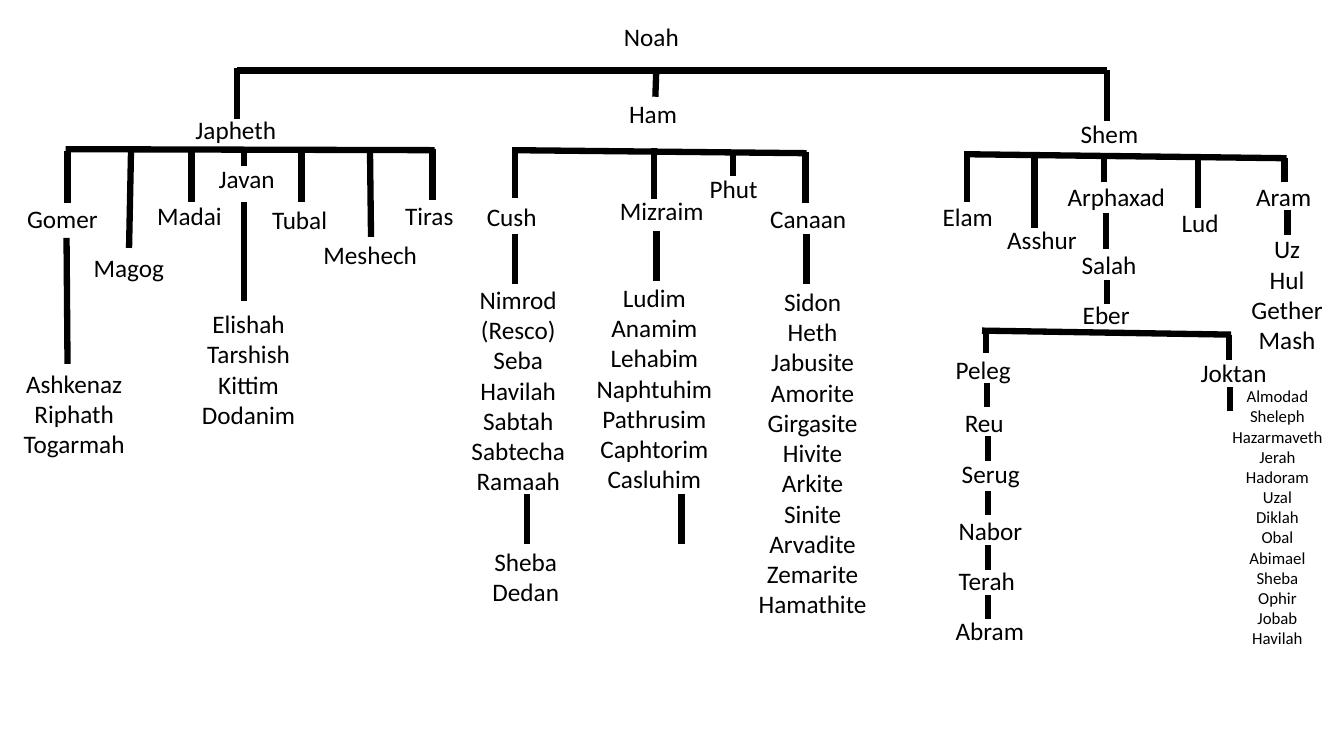
"""Draw the family tree of Noah on one slide."""
from dataclasses import dataclass

from lxml.etree import SubElement
from pptx import Presentation
from pptx.dml.color import RGBColor
from pptx.enum.shapes import MSO_CONNECTOR as Link
from pptx.enum.text import MSO_AUTO_SIZE as Fit, PP_ALIGN as Align
from pptx.oxml.ns import qn
from pptx.slide import Slide
from pptx.util import Inches, Pt

FONT = "Calibri"
INK = "000000"
PAD = 0.1
LEAD = 1.22


@dataclass
class Name:
    text: str
    left: float
    top: float
    width: float = 0.81


@dataclass
class Kin:
    names: str
    left: float
    top: float
    width: float = 1.7
    size: int = 18
    wraps: int = 0


@dataclass
class Bar:
    left: float
    start: float
    right: float
    end: float


@dataclass
class Drop:
    x: float
    top: float
    foot: float
    lean: float = 0


NAMES = [
    Name("Noah", 6.09, 0.16),
    Name("Japheth", 1.84, 1.08, 1.45),
    Name("Ham", 6.14, 0.93),
    Name("Shem", 10.62, 1.12),
    Name("Gomer", 0.17, 1.97, 1.11),
    Name("Magog", 0.83, 2.45, 0.94),
    Name("Madai", 1.46, 1.94, 0.95),
    Name("Javan", 2.07, 1.57),
    Name("Tubal", 2.6, 1.98),
    Name("Meshech", 3.11, 2.32, 1.2),
    Name("Tiras", 3.92, 1.94),
    Name("Cush", 4.73, 1.95),
    Name("Mizraim", 6.05, 1.89, 1.22),
    Name("Phut", 6.94, 1.67),
    Name("Canaan", 7.54, 1.97, 1.03),
    Name("Elam", 9.25, 1.95),
    Name("Asshur", 9.89, 2.18, 1.09),
    Name("Arphaxad", 10.49, 1.75, 1.37),
    Name("Lud", 11.62, 2.01),
    Name("Aram", 12.36, 1.75),
    Name("Salah", 10.63, 2.42),
    Name("Eber", 10.64, 2.92),
    Name("Peleg", 9.38, 3.47),
    Name("Joktan", 11.81, 3.5, 1.1),
    Name("Reu", 9.47, 3.99),
    Name("Serug", 9.44, 4.5),
    Name("Nabor", 9.41, 5.06, 1.17),
    Name("Terah", 9.41, 5.56),
    Name("Abram", 9.38, 6.06, 1.05),
]

KIN = [
    Kin("Ashkenaz,Riphath,Togarmah", -0.14, 3.6, 1.75),
    Kin("Elishah,Tarshish,Kittim,Dodanim", 1.81, 3.01, 1.31),
    Kin("Nimrod (Resco),Seba,Havilah,Sabtah,Sabtecha,Ramaah",
        4.29, 2.77, wraps=1),
    Kin("Sheba,Dedan", 4.58, 5.37, 1.27),
    Kin("Ludim,Anamim,Lehabim,Naphtuhim,Pathrusim,Caphtorim,Casluhim",
        5.64, 2.75),
    Kin("Sidon,Heth,Jabusite,Amorite,Girgasite,Hivite,Arkite,Sinite,"
        "Arvadite,Zemarite,Hamathite", 7.21, 2.79),
    Kin("Uz,Hul,Gether,Mash", 12.12, 2.27, 1.29),
    Kin("Almodad,Sheleph,Hazarmaveth,Jerah,Hadoram,Uzal,Diklah,Obal,"
        "Abimael,Sheba,Ophir,Jobab,Havilah", 11.82, 3.78, size=12),
]

BARS = [
    Bar(2.35, 0.7, 10.98, 0.7),
    Bar(0.65, 1.48, 4.31, 1.49),
    Bar(5.09, 1.49, 8, 1.52),
    Bar(9.57, 1.53, 12.76, 1.57),
    Bar(9.74, 3.28, 12.21, 3.32),
]

DROPS = [
    Drop(2.35, 0.67, 1.18), Drop(6.51, 0.67, 0.96, -0.01),
    Drop(10.98, 0.69, 1.2),
    Drop(0.67, 1.5, 2.01), Drop(1.3, 1.47, 2.46, -0.02),
    Drop(1.9, 1.5, 2), Drop(2.42, 1.49, 1.65), Drop(2.99, 1.49, 2),
    Drop(3.67, 1.5, 2.35, 0.01), Drop(4.29, 1.48, 1.98),
    Drop(0.66, 2.36, 3.61, 0.01), Drop(2.42, 2, 2.99),
    Drop(5.11, 1.46, 1.96), Drop(6.49, 1.47, 1.97),
    Drop(7.27, 1.51, 1.75), Drop(7.99, 1.51, 2.01),
    Drop(5.11, 2.32, 2.82), Drop(6.51, 2.29, 2.79), Drop(8, 2.32, 2.82),
    Drop(5.23, 4.9, 5.4), Drop(6.76, 4.9, 5.4),
    Drop(9.59, 1.5, 2), Drop(10.26, 1.52, 2.26), Drop(10.95, 1.57, 1.81),
    Drop(11.88, 1.56, 2.06), Drop(12.74, 1.57, 1.81),
    Drop(10.97, 2.11, 2.47), Drop(12.77, 2.08, 2.33),
    Drop(10.98, 2.78, 3.02),
    Drop(9.78, 3.3, 3.5), Drop(12.19, 3.32, 3.57), Drop(12.2, 3.84, 4.08),
    Drop(9.79, 3.8, 4.04), Drop(9.8, 4.33, 4.57), Drop(9.8, 4.87, 5.11),
    Drop(9.8, 5.41, 5.65), Drop(9.8, 5.9, 6.14),
]


def tint(code: str) -> RGBColor:
    return RGBColor.from_string(code)


def write(slide: Slide, kin: Kin, align: Align) -> None:
    names = kin.names.split(",")
    rows = len(names) + kin.wraps
    high = PAD + rows * kin.size * LEAD / 72
    box = slide.shapes.add_textbox(Inches(kin.left), Inches(kin.top),
                                   Inches(kin.width), Inches(high))
    frame = box.text_frame
    frame.word_wrap = True
    frame.auto_size = Fit.SHAPE_TO_FIT_TEXT
    for i, name in enumerate(names):
        para = frame.add_paragraph() if i else frame.paragraphs[0]
        para.alignment = align
        run = para.add_run()
        run.text = name
        run.font.name = FONT
        run.font.size = Pt(kin.size)
        run.font.color.rgb = tint(INK)


def rule(slide: Slide, x1: float, y1: float, x2: float, y2: float) -> None:
    line = slide.shapes.add_connector(Link.STRAIGHT, Inches(x1), Inches(y1),
                                      Inches(x2), Inches(y2))
    line.line.color.rgb = tint(INK)
    line.line.width = Pt(4.5)
    SubElement(line._element.spPr, qn("a:effectLst"))


def main() -> None:
    deck = Presentation()
    deck.slide_width = Inches(13.33)
    deck.slide_height = Inches(7.5)
    slide = deck.slides.add_slide(deck.slide_layouts[6])
    for bar in BARS:
        rule(slide, bar.left, bar.start, bar.right, bar.end)
    for drop in DROPS:
        rule(slide, drop.x + drop.lean, drop.foot, drop.x, drop.top)
    for name in NAMES:
        write(slide, Kin(name.text, name.left, name.top, name.width),
              Align.LEFT)
    for kin in KIN:
        write(slide, kin, Align.CENTER)
    deck.save("out.pptx")


if __name__ == "__main__":
    main()
